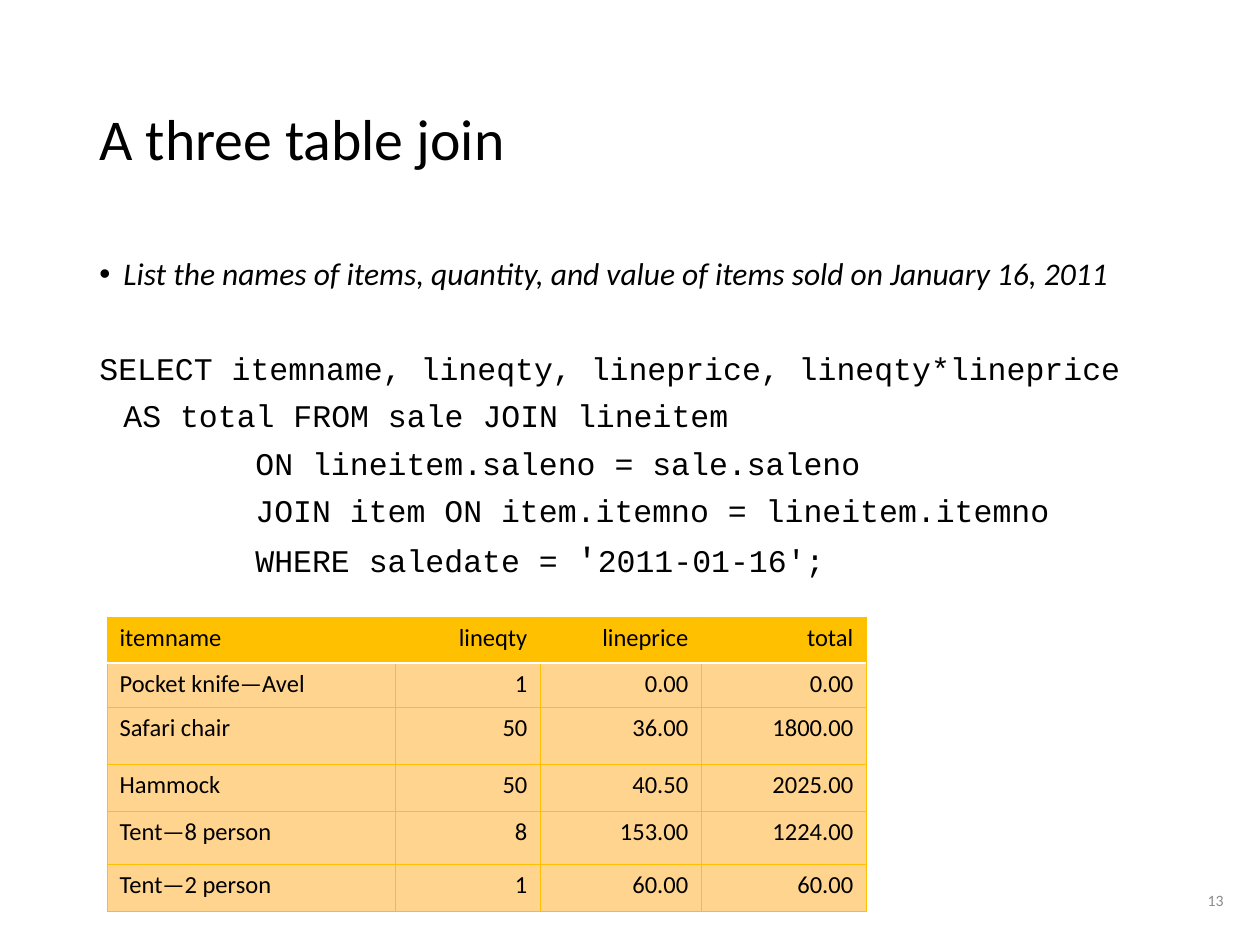
from lxml.etree import SubElement
from pptx import Presentation
from pptx.dml.color import RGBColor
from pptx.enum.text import MSO_ANCHOR, PP_ALIGN
from pptx.oxml.ns import qn
from pptx.util import Pt

COLORS = {
    "text": "000000",
    "number": "8C8C8C",
    "header": "FFC000",
    "cell": "FFD48F",
    "rule": "FFFFFF",
}
SANS, MONO = "Calibri", "Courier New"

QUERY = "List the names of items, quantity, and value of items sold on January 16, 2011"
# Each line of SQL: indent in px, then runs of (text, size)
SQL = [
    (0, [("SELECT itemname, lineqty, lineprice, lineqty*lineprice", 18)]),
    (24, [("AS total FROM sale JOIN lineitem", 18)]),
    (156, [("ON lineitem.saleno = sale.saleno", 18)]),
    (156, [("JOIN item ON item.itemno = lineitem.itemno", 18)]),
    (156, [("WHERE saledate = ", 18), ("'", 20), ("2011-01-16';", 18)]),
]
ROWS = [
    ("itemname", "lineqty", "lineprice", "total"),
    ("Pocket knife—Avel", "1", "0.00", "0.00"),
    ("Safari chair", "50", "36.00", "1800.00"),
    ("Hammock", "50", "40.50", "2025.00"),
    ("Tent—8 person", "8", "153.00", "1224.00"),
    ("Tent—2 person", "1", "60.00", "60.00"),
]
COL_WIDTHS = [288, 145, 161, 165]
ROW_HEIGHTS = [46, 44, 57, 47, 53, 48]


def px(n):
    return round(n * 914400 / 126)


def rgb(name):
    return RGBColor.from_string(COLORS[name])


def style_run(r, size, font=SANS, color="text", italic=False):
    r.font.size = Pt(size)
    r.font.name = font
    r.font.italic = italic
    r.font.color.rgb = rgb(color)


def add_text_frame(slide, box, anchor=MSO_ANCHOR.TOP):
    tf = slide.shapes.add_textbox(*map(px, box)).text_frame
    tf.word_wrap = True
    tf.vertical_anchor = anchor
    return tf


def add_line(slide, box, text, size, color="text", align=PP_ALIGN.LEFT):
    tf = add_text_frame(slide, box, MSO_ANCHOR.MIDDLE)
    tf.text = text
    p = tf.paragraphs[0]
    p.alignment = align
    p.line_spacing = 0.9
    style_run(p.runs[0], size, color=color)


def set_indent(p, left, first=0, bullet=None):
    pPr = p._p.get_or_add_pPr()
    pPr.set("marL", str(px(left)))
    pPr.set("indent", str(px(first)))
    if bullet:
        SubElement(pPr, qn("a:buFont")).set("typeface", "Arial")
        SubElement(pPr, qn("a:buChar")).set("char", bullet)


def add_body(slide, box):
    tf = add_text_frame(slide, box)

    # Question as a bullet
    p = tf.paragraphs[0]
    p.text = QUERY
    p.line_spacing = 0.9
    p.space_before = Pt(7.5)
    set_indent(p, 24, -24, "•")
    style_run(p.runs[0], 18, italic=True)

    # SQL answer, set off from the question by a wider gap
    for i, (indent, runs) in enumerate(SQL):
        p = tf.add_paragraph()
        p.line_spacing = 0.9
        p.space_before = Pt(7.5 if i else 35)
        set_indent(p, indent)
        for text, size in runs:
            r = p.add_run()
            r.text = text
            style_run(r, size, MONO)


def set_borders(cell, borders):
    """Draw (side, colour, width) lines; they must precede the fill."""
    tcPr = cell._tc.get_or_add_tcPr()
    for i, (side, color, width) in enumerate(borders):
        ln = SubElement(tcPr, qn(f"a:ln{side}"), w=str(Pt(width)))
        fill = SubElement(ln, qn("a:solidFill"))
        SubElement(fill, qn("a:srgbClr")).set("val", COLORS[color])
        tcPr.insert(i, ln)


def add_result_table(slide, box):
    frame = slide.shapes.add_table(len(ROWS), len(COL_WIDTHS), *map(px, box))
    table = frame.table
    table.first_row = table.horz_banding = False
    for col, width in zip(table.columns, COL_WIDTHS):
        col.width = px(width)
    for row, height in zip(table.rows, ROW_HEIGHTS):
        row.height = px(height)

    for i, values in enumerate(ROWS):
        for j, value in enumerate(values):
            cell = table.cell(i, j)
            cell.text = value
            cell.fill.solid()
            cell.fill.fore_color.rgb = rgb("cell" if i else "header")
            p = cell.text_frame.paragraphs[0]
            p.alignment = PP_ALIGN.RIGHT if j else PP_ALIGN.LEFT
            style_run(p.runs[0], 14)
            # White rule between header and data, thin gold lines elsewhere
            top = ("T", "rule", 1) if i == 1 else ("T", "header", 0.5)
            bottom = ("B", "header", 0.5) if i else ("B", "rule", 1)
            sides = [("L", "header", 0.5), ("R", "header", 0.5)]
            set_borders(cell, sides + [top, bottom])


def main():
    prs = Presentation()
    prs.slide_width, prs.slide_height = px(1260), px(945)
    slide = prs.slides.add_slide(prs.slide_layouts[6])

    add_line(slide, (87, 50, 1086, 183), "A three table join", 33)
    add_body(slide, (87, 252, 1086, 600))
    add_line(slide, (953, 876, 283, 50), "13", 9, "number", PP_ALIGN.RIGHT)
    add_result_table(slide, (107, 617, sum(COL_WIDTHS), sum(ROW_HEIGHTS)))

    prs.save("out.pptx")


if __name__ == "__main__":
    main()
